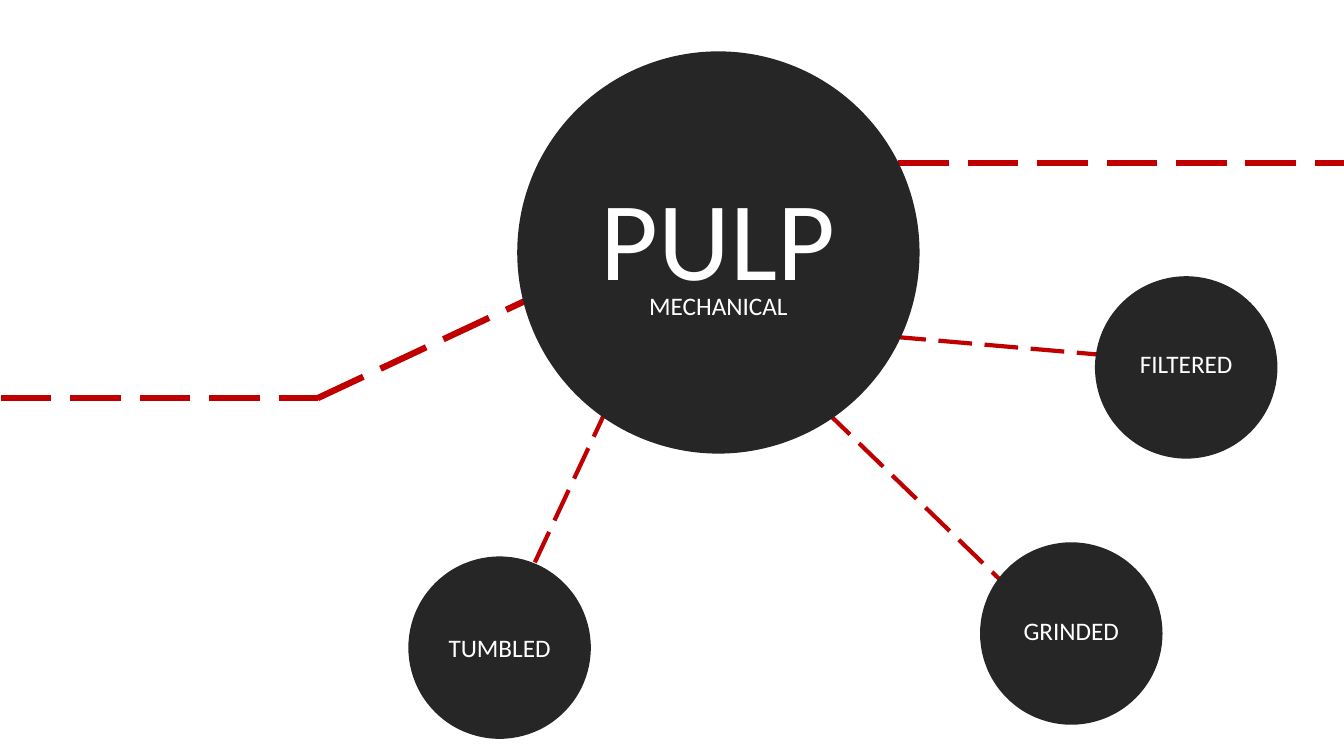
from lxml import etree
from pptx import Presentation
from pptx.dml.color import RGBColor
from pptx.enum.dml import MSO_LINE
from pptx.enum.shapes import MSO_CONNECTOR, MSO_SHAPE
from pptx.enum.text import PP_ALIGN
from pptx.oxml.ns import qn
from pptx.util import Inches, Pt

STRAIGHT = MSO_CONNECTOR.STRAIGHT
OVAL = MSO_SHAPE.OVAL
LONG_DASH = MSO_LINE.LONG_DASH
CENTER = PP_ALIGN.CENTER

RED = RGBColor(0xC0, 0x00, 0x00)
CHARCOAL = RGBColor(0x26, 0x26, 0x26)
WHITE = RGBColor(0xFF, 0xFF, 0xFF)

HUB_SIZE = 3.99
NODE_SIZE = 1.81
LABEL_WIDTH, LABEL_HEIGHT = 3.4, 0.4
THIN, THICK = 3, 4.5

# x1, y1, x2, y2, width
LINES = [
    (6.03, 4.03, 5, 6.23, THIN),
    (8.85, 3.34, 11.27, 3.55, THIN),
    (7.53, 3.44, 10, 5.83, THIN),
    (0.01, 3.95, 3.15, 3.95, THICK),
    (3.15, 3.95, 5.22, 2.98, THICK),
    (8.91, 1.62, 13.33, 1.62, THICK),
]

# label, circle left, circle top, label top
NODES = [
    ("TUMBLED", 4.05, 5.52, 6.22),
    ("GRINDED", 9.72, 5.38, 6.06),
    ("FILTERED", 10.86, 2.74, 3.41),
]


def add_dashed_line(slide, x1, y1, x2, y2, width):
    s = slide.shapes.add_connector(
        STRAIGHT, Inches(x1), Inches(y1), Inches(x2), Inches(y2))
    s.line.color.rgb = RED
    s.line.width = Pt(width)
    s.line.dash_style = LONG_DASH
    etree.SubElement(s._element.spPr, qn("a:effectLst"))


def add_circle(slide, left, top, size):
    s = slide.shapes.add_shape(
        OVAL, Inches(left), Inches(top), Inches(size), Inches(size))
    s.shadow.inherit = False
    s.fill.solid()
    s.fill.fore_color.rgb = CHARCOAL
    s.line.fill.background()


def add_label(slide, text, center, top, width=LABEL_WIDTH,
              height=LABEL_HEIGHT, size=18):
    """Add white text centred on the given x position."""
    s = slide.shapes.add_textbox(
        Inches(center - width / 2), Inches(top), Inches(width), Inches(height))
    tf = s.text_frame
    tf.word_wrap = True
    p = tf.paragraphs[0]
    p.alignment = CENTER
    r = p.add_run()
    r.text = text
    for name, value in {"name": "Calibri", "size": Pt(size)}.items():
        setattr(r.font, name, value)
    r.font.color.rgb = WHITE


def main():
    prs = Presentation()
    prs.slide_width, prs.slide_height = Inches(13.33), Inches(7.5)
    slide = prs.slides.add_slide(prs.slide_layouts[6])

    for line in LINES:
        add_dashed_line(slide, *line)

    hub_left = 5.13
    hub_center = hub_left + HUB_SIZE / 2
    add_circle(slide, hub_left, 0.51, HUB_SIZE)
    add_label(slide, "PULP", hub_center, 1.62, HUB_SIZE, 1.45, 80)
    add_label(slide, "MECHANICAL", hub_center, 2.83)

    for text, left, top, label_top in NODES:
        add_circle(slide, left, top, NODE_SIZE)
        add_label(slide, text, left + NODE_SIZE / 2, label_top)

    prs.save("out.pptx")


if __name__ == "__main__":
    main()
